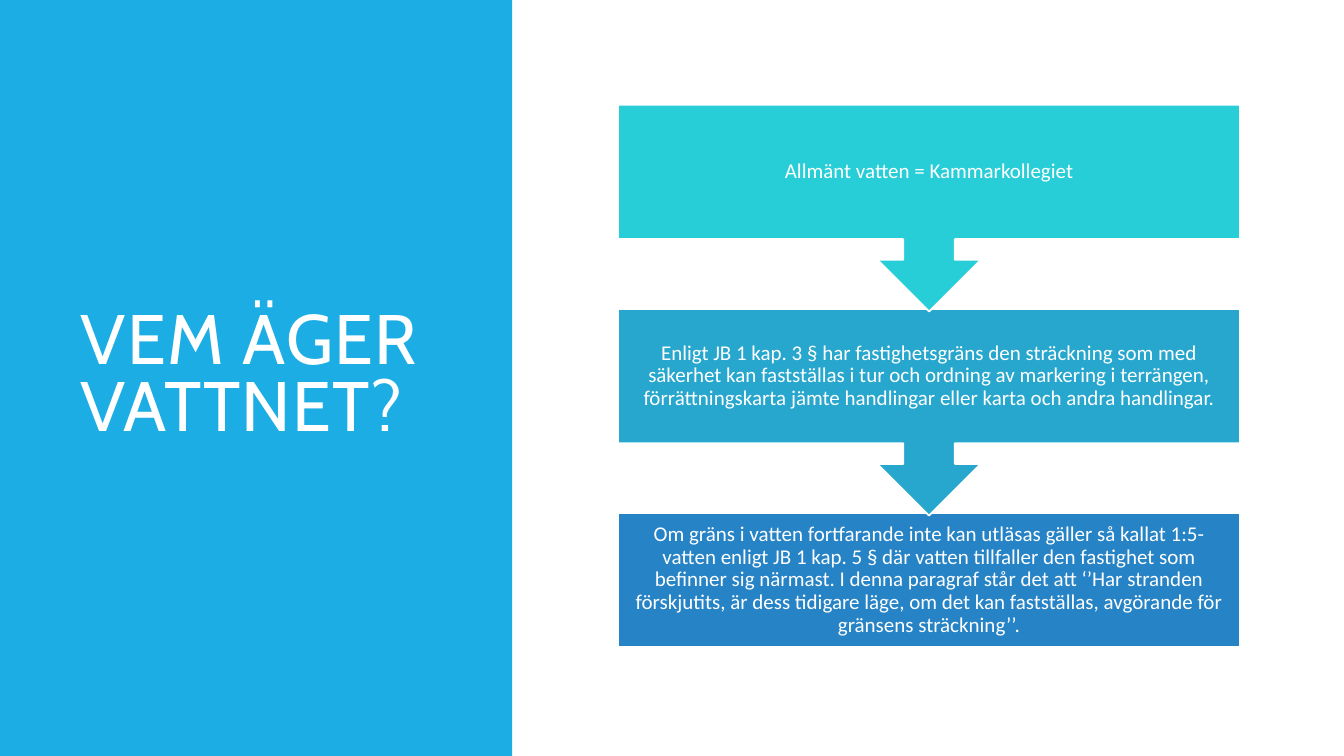
from pptx import Presentation
from pptx.dml.color import RGBColor
from pptx.enum import shapes, text
from pptx.util import Inches, Pt

TITLE = "VEM ÄGER VATTNET?"
WHITE = "FFFFFF"
PANEL_COLOR = "1CADE4"
STEPS = [
    ("27CED7", "Allmänt vatten = Kammarkollegiet"),
    ("27A7CE", "Enligt JB 1 kap. 3 § har fastighetsgräns den sträckning som med "
               "säkerhet kan fastställas i tur och ordning av markering i terrängen, "
               "förrättningskarta jämte handlingar eller karta och andra handlingar."),
    ("2683C6", "Om gräns i vatten fortfarande inte kan utläsas gäller så kallat "
               "1:5-vatten enligt JB 1 kap. 5 § där vatten tillfaller den fastighet som "
               "befinner sig närmast. I denna paragraf står det att ‘’Har stranden "
               "förskjutits, är dess tidigare läge, om det kan fastställas, avgörande "
               "för gränsens sträckning’’."),
]

STEP_LEFT, STEP_TOP, STEP_WIDTH = 6.13, 1.04, 6.17
STEP_PITCH = 2.025
BOX_HEIGHT, CALLOUT_HEIGHT = 1.33, 2.05


def color(hex_value):
    return RGBColor.from_string(hex_value)


def add_filled_shape(slide, kind, box, fill):
    shape = slide.shapes.add_shape(kind, *(Inches(value) for value in box))
    shape.shadow.inherit = False
    shape.fill.solid()
    shape.fill.fore_color.rgb = color(fill)
    shape.line.fill.background()
    return shape


def write(shape, words, font_name, size, line_spacing, alignment):
    """Fill a shape with one white, vertically centred paragraph."""
    frame = shape.text_frame
    frame.word_wrap = True
    frame.auto_size = text.MSO_AUTO_SIZE.NONE
    frame.vertical_anchor = text.MSO_ANCHOR.MIDDLE
    paragraph = frame.paragraphs[0]
    paragraph.text = words
    paragraph.alignment = alignment
    paragraph.line_spacing = line_spacing
    paragraph.font.name = font_name
    paragraph.font.size = Pt(size)
    paragraph.font.color.rgb = color(WHITE)
    return frame


def add_title(slide):
    title = slide.shapes.title
    title.left, title.top = Inches(0.7), Inches(0.7)
    title.width, title.height = Inches(3.74), Inches(6.09)
    frame = write(title, TITLE, "Cabin", 50, 0.8, text.PP_ALIGN.LEFT)
    run = frame.paragraphs[0].runs[0]
    run._r.get_or_add_rPr().set("spc", "100")


def add_step(slide, index):
    fill, words = STEPS[index]
    is_last = index == len(STEPS) - 1
    kind = (shapes.MSO_SHAPE.RECTANGLE if is_last
            else shapes.MSO_SHAPE.DOWN_ARROW_CALLOUT)
    height = BOX_HEIGHT if is_last else CALLOUT_HEIGHT
    top = STEP_TOP + index * STEP_PITCH
    step = add_filled_shape(slide, kind, (STEP_LEFT, top, STEP_WIDTH, height), fill)
    step.line.color.rgb = color(WHITE)
    step.line.width = Pt(1.25)
    frame = write(step, words, "Calibri", 15, 0.9, text.PP_ALIGN.CENTER)
    frame.margin_left = frame.margin_right = Inches(0.12)
    frame.margin_top = frame.margin_bottom = Inches(0.05)


def main():
    presentation = Presentation()
    presentation.slide_width = Inches(13.33)
    presentation.slide_height = Inches(7.5)
    slide = presentation.slides.add_slide(presentation.slide_layouts[5])

    panel = add_filled_shape(slide, shapes.MSO_SHAPE.RECTANGLE,
                             (0, 0, 5.08, 7.5), PANEL_COLOR)
    # The panel goes behind the title placeholder.
    slide.shapes.title._element.addprevious(panel._element)
    add_title(slide)

    # Bottom step first, so that each arrow tip overlaps the step below it.
    for index in reversed(range(len(STEPS))):
        add_step(slide, index)

    presentation.save("out.pptx")


if __name__ == "__main__":
    main()
